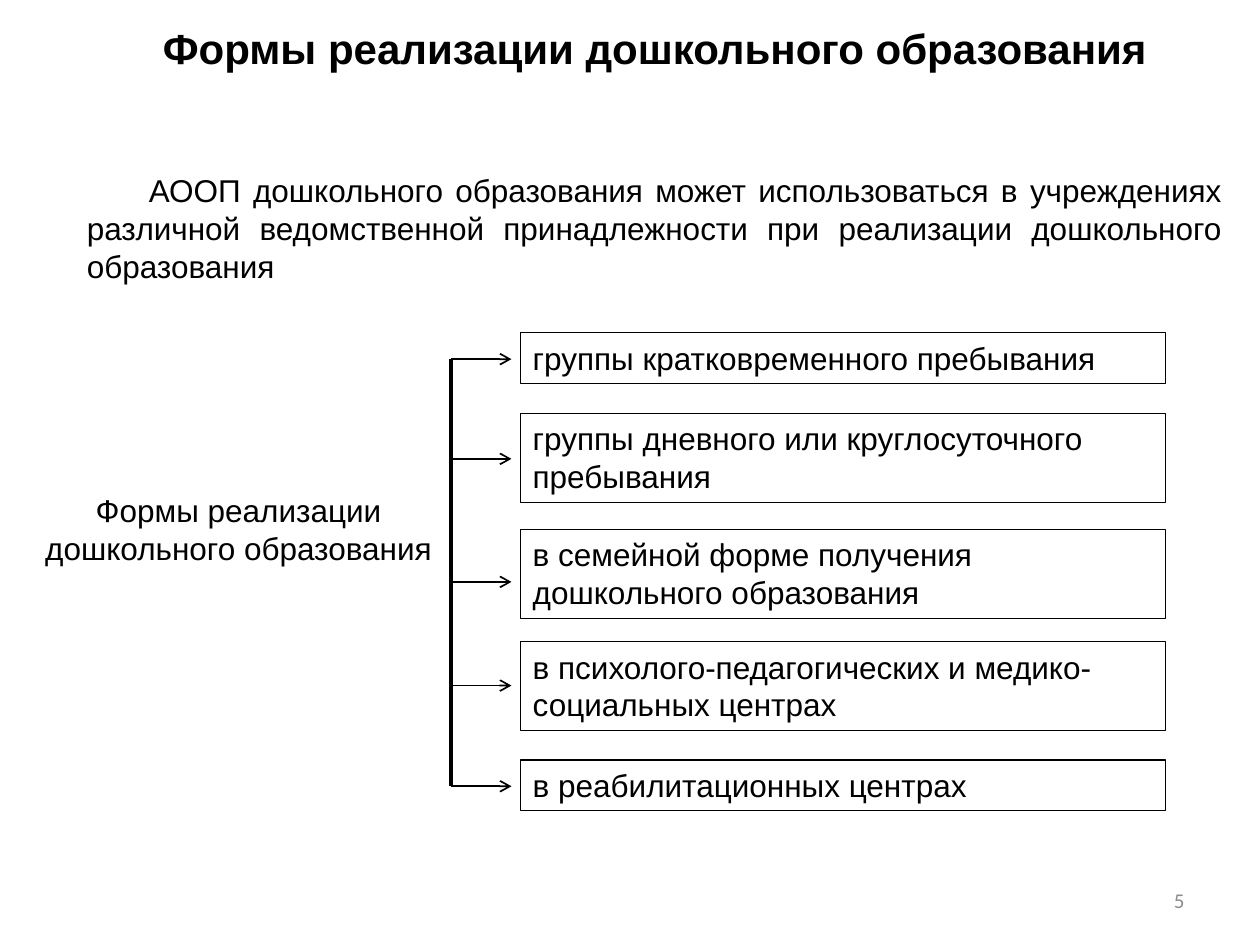
from dataclasses import dataclass

import pptx
import pptx.dml.color
import pptx.enum.shapes
import pptx.enum.text
import pptx.oxml
import pptx.oxml.ns
import pptx.util
from pptx.util import Cm, Pt

ALIGN = pptx.enum.text.PP_ALIGN
ANCHOR = pptx.enum.text.MSO_ANCHOR
NS = pptx.oxml.ns.nsdecls("a")


@dataclass(frozen=True)
class Theme:
    font: str = "Arial"
    number_font: str = "Calibri"
    ink: str = "000000"
    muted: str = "8C8C8C"
    title: float = 24
    body: float = 18
    number: float = 12
    box_line: float = 0.75
    arrow_line: float = 1
    trunk_line: float = 2.25


THEME = Theme()

BOX_LEFT, BOX_WIDTH = 10.49, 13
TRUNK_X, ARROW_END = 9.09, 10.31
# text, box top, box height, arrow height on the trunk (cm)
FORMS = [
    ("группы кратковременного пребывания", 6.71, 1.02, 7.24),
    ("группы дневного или круглосуточного пребывания", 8.33, 1.8, 9.25),
    ("в семейной форме получения дошкольного образования", 10.67, 1.8, 11.73),
    ("в психолого-педагогических и медико-социальных центрах", 12.93, 1.8, 13.82),
    ("в реабилитационных центрах", 15.32, 1.02, 15.85),
]


def rgb(color):
    return pptx.dml.color.RGBColor.from_string(color)


def style_font(font, size, color=THEME.ink, name=THEME.font, bold=False):
    font.name, font.size, font.bold = name, Pt(size), bold
    font.color.rgb = rgb(color)


def write(sp, text, size=THEME.body, align=ALIGN.LEFT, anchor=ANCHOR.TOP, bold=False):
    tf = sp.text_frame
    tf.word_wrap = True
    tf.auto_size = pptx.enum.text.MSO_AUTO_SIZE.NONE
    tf.vertical_anchor = anchor
    p = tf.paragraphs[0]
    p.alignment = align
    r = p.add_run()
    r.text = text
    style_font(r.font, size, bold=bold)
    return p


def add_title(s, text):
    sp = s.shapes.title
    sp.left, sp.top, sp.width, sp.height = Cm(1.7), Cm(0.33), Cm(23), Cm(1.27)
    write(sp, text, THEME.title, ALIGN.CENTER, bold=True)


def add_text(s, box, text, align):
    sp = s.shapes.add_textbox(*map(Cm, box))
    return write(sp, text, align=align)


def add_box(s, box, text):
    sp = s.shapes.add_shape(pptx.enum.shapes.MSO_SHAPE.RECTANGLE, *map(Cm, box))
    sp.shadow.inherit = False
    sp.fill.background()
    sp.line.color.rgb = rgb(THEME.ink)
    sp.line.width = Pt(THEME.box_line)
    write(sp, text)


def add_line(s, start, end, width, arrow=False):
    kind = pptx.enum.shapes.MSO_CONNECTOR.STRAIGHT
    sp = s.shapes.add_connector(kind, *map(Cm, start + end))
    sp.line.color.rgb = rgb(THEME.ink)
    sp.line.width = Pt(width)
    if arrow:
        sp.line._get_or_add_ln().append(
            pptx.oxml.parse_xml(f'<a:tailEnd {NS} type="arrow"/>'))
    sp._element.spPr.append(pptx.oxml.parse_xml(f"<a:effectLst {NS}/>"))


def add_slide_number(s, box, number):
    """A live slide number field in a text box."""
    sp = s.shapes.add_textbox(*map(Cm, box))
    tf = sp.text_frame
    tf.word_wrap = True
    tf.vertical_anchor = ANCHOR.MIDDLE
    p = tf.paragraphs[0]
    p.alignment = ALIGN.RIGHT
    r = p.add_run()
    r.text = str(number)
    style_font(r.font, THEME.number, THEME.muted, THEME.number_font)
    field = pptx.oxml.parse_xml(
        f'<a:fld {NS} id="{{B6F15528-21DE-4FAA-801E-634DDDAF4B2B}}" type="slidenum"/>')
    r._r.addprevious(field)
    field.extend(list(r._r))
    p._p.remove(r._r)


def main():
    prs = pptx.Presentation()
    prs.slide_width, prs.slide_height = Cm(25.4), Cm(19.05)
    prs.element.set("firstSlideNum", "5")
    s = prs.slides.add_slide(prs.slide_layouts[5])

    add_title(s, "Формы реализации дошкольного образования")
    p = add_text(
        s, (1.5, 3.33, 23.39, 2.57),
        "АООП дошкольного образования может использоваться в учреждениях "
        "различной ведомственной принадлежности при реализации дошкольного "
        "образования", ALIGN.JUSTIFY)
    p._p.get_or_add_pPr().set("indent", str(Cm(1.25)))
    add_text(s, (0.5, 9.78, 8.62, 1.8),
             "Формы реализации дошкольного образования", ALIGN.CENTER)

    add_line(s, (TRUNK_X, FORMS[0][3]), (TRUNK_X, FORMS[-1][3]), THEME.trunk_line)
    for text, top, height, y in FORMS:
        add_box(s, (BOX_LEFT, top, BOX_WIDTH, height), text)
        add_line(s, (TRUNK_X, y), (ARROW_END, y), THEME.arrow_line, arrow=True)

    add_slide_number(s, (18.2, 17.65, 5.93, 1.01), 5)
    prs.save("out.pptx")


if __name__ == "__main__":
    main()
